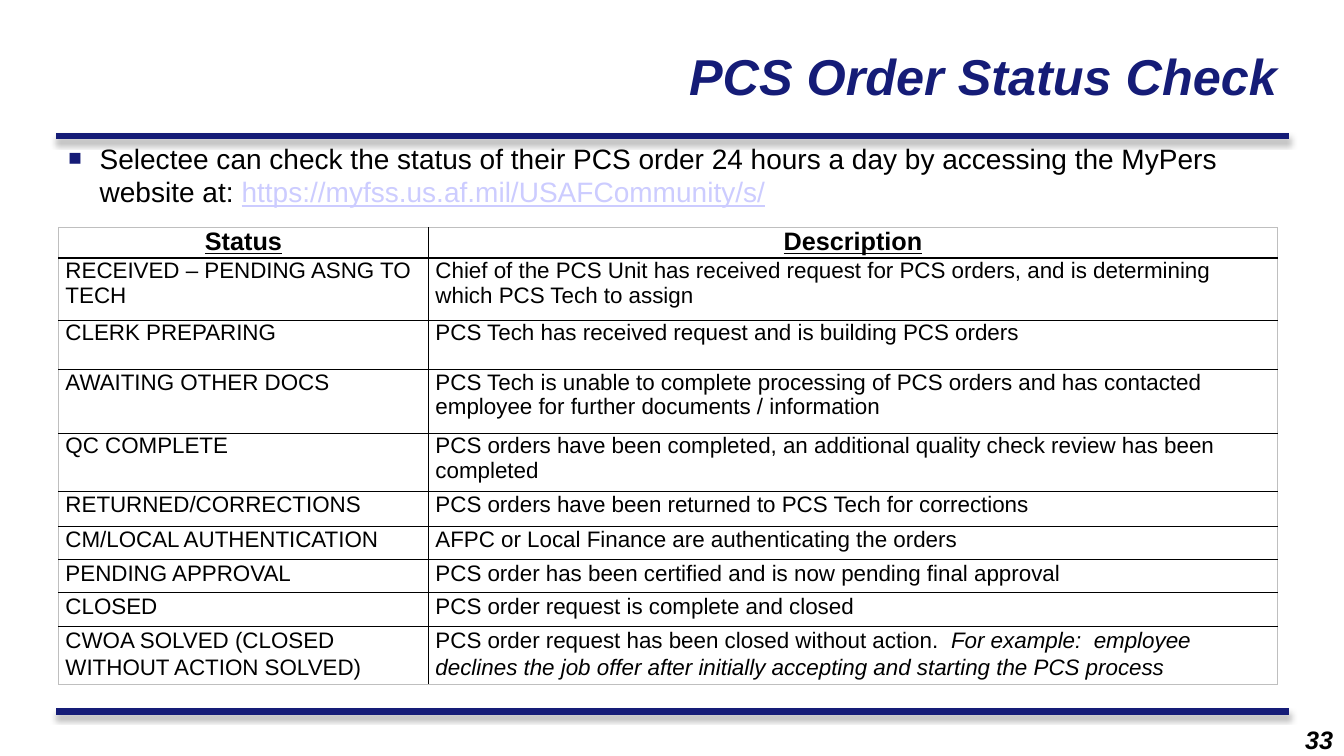
from lxml import etree
from pptx import Presentation
from pptx.dml.color import RGBColor
from pptx.enum.shapes import MSO_CONNECTOR
from pptx.enum.text import MSO_ANCHOR, PP_ALIGN
from pptx.oxml.ns import qn
from pptx.util import Inches, Pt

STRAIGHT = MSO_CONNECTOR.STRAIGHT
TOP = MSO_ANCHOR.TOP
CENTER, RIGHT, LEFT = PP_ALIGN.CENTER, PP_ALIGN.RIGHT, PP_ALIGN.LEFT
NAVY, BLACK, LILAC, GRAY = "151C77", "000000", "CCCCFF", "BFBFBF"

COLUMN_WIDTHS = [3.67, 8.42]
ROW_HEIGHTS = [0.28, 0.62, 0.49, 0.63, 0.58, 0.34, 0.33, 0.33, 0.34, 0.53]
FIRST_LOOSE_ROW = 6  # rows from here on have wider line spacing
HEADER = {"size": Pt(18), "bold": True, "underline": True}
PLAIN = {"size": Pt(16)}
STATUSES = [
    ("RECEIVED – PENDING ASNG TO TECH",
     ["Chief of the PCS Unit has received request for PCS orders, and is "
      "determining which PCS Tech to assign"]),
    ("CLERK PREPARING",
     ["PCS Tech has received request and is building PCS orders"]),
    ("AWAITING OTHER DOCS",
     ["PCS Tech is unable to complete processing of PCS orders and has "
      "contacted employee for further documents / information"]),
    ("QC COMPLETE",
     ["PCS orders have been completed, an additional quality check review "
      "has been completed"]),
    ("RETURNED/CORRECTIONS",
     ["PCS orders have been returned to PCS Tech for corrections"]),
    ("CM/LOCAL AUTHENTICATION",
     ["AFPC or Local Finance are authenticating the orders"]),
    ("PENDING APPROVAL",
     ["PCS order has been certified and is now pending final approval"]),
    ("CLOSED", ["PCS order request is complete and closed"]),
    ("CWOA SOLVED (CLOSED WITHOUT ACTION SOLVED)",
     ["PCS order request has been closed without action.  ",
      "For example:  employee declines the job offer after initially "
      "accepting and starting the PCS process"]),
]


def rgb(color):
    return RGBColor.from_string(color)


def add_element(parent, tag, **attributes):
    return etree.SubElement(parent, qn(tag), attributes)


def add_span(para, text, color=BLACK, **font):
    span = para.add_run()
    span.text = text
    span.font.name = "Arial"
    span.font.color.rgb = rgb(color)
    for name, value in font.items():
        setattr(span.font, name, value)


def place(shape, left, top, width, height):
    """Positions a shape and wraps its text from the top edge."""
    bounds = {"left": left, "top": top, "width": width, "height": height}
    for name, value in bounds.items():
        setattr(shape, name, Inches(value))
    shape.text_frame.word_wrap = True
    shape.text_frame.vertical_anchor = TOP


def add_text_box(slide, *bounds):
    box = slide.shapes.add_textbox(*map(Inches, bounds))
    place(box, *bounds)
    return box.text_frame.paragraphs[0]


def add_rule(slide, y):
    """Draws a navy line across the slide with a soft shadow below."""
    rule = slide.shapes.add_connector(
        STRAIGHT, Inches(0.56), Inches(y), Inches(12.78), Inches(y))
    rule.line.color.rgb = rgb(NAVY)
    rule.line.width = Pt(4.5)
    properties = rule.line._get_or_add_ln().getparent()
    effects = add_element(properties, "a:effectLst")
    shadow = add_element(effects, "a:outerShdw", blurRad=str(Pt(4)),
                         dist=str(Pt(3)), dir="5400000", rotWithShape="0")
    color = add_element(shadow, "a:srgbClr", val=BLACK)
    add_element(color, "a:alpha", val="40000")


def set_title(slide):
    title = slide.shapes.title
    place(title, 5.42, 0.45, 7.5, 0.98)
    title.text_frame.margin_top = 0
    title.text_frame.margin_right = Inches(0.25)
    para = title.text_frame.paragraphs[0]
    para.alignment = RIGHT
    add_span(para, "PCS Order Status Check", NAVY,
             size=Pt(36), bold=True, italic=True)


def add_bullet(slide):
    para = add_text_box(slide, 0.58, 1.35, 12.08, 0.8)
    properties = para._p.get_or_add_pPr()
    indent = Inches(0.31)
    properties.set("marL", str(indent))
    properties.set("indent", str(-indent))
    bullet_color = add_element(properties, "a:buClr")
    add_element(bullet_color, "a:srgbClr", val=NAVY)
    add_element(properties, "a:buSzPct", val="80000")
    add_element(properties, "a:buFont", typeface="Arial")
    add_element(properties, "a:buChar", char="■")
    add_span(para, "Selectee can check the status of their PCS order 24 hours "
             "a day by accessing the MyPers website at: ", size=Pt(20))
    add_span(para, "https://myfss.us.af.mil/USAFCommunity/s/", LILAC,
             size=Pt(20), underline=True)


def set_borders(cell, outer_sides):
    properties = cell._tc.get_or_add_tcPr()
    for side in "LRTB":
        outer = side in outer_sides
        line = add_element(properties, f"a:ln{side}",
                           w=str(Pt(0.5 if outer else 1)))
        fill = add_element(line, "a:solidFill")
        add_element(fill, "a:srgbClr", val=GRAY if outer else BLACK)


def format_cell(cell, outer_sides):
    margins = {"margin_left": 0.07, "margin_right": 0.07,
               "margin_top": 0, "margin_bottom": 0}
    for name, value in margins.items():
        setattr(cell, name, Inches(value))
    set_borders(cell, outer_sides)
    cell.fill.background()


def add_status_table(slide):
    frame = slide.shapes.add_table(
        len(ROW_HEIGHTS), len(COLUMN_WIDTHS), Inches(0.58), Inches(2.26),
        Inches(sum(COLUMN_WIDTHS)), Inches(sum(ROW_HEIGHTS)))
    table = frame.table
    table.horz_banding = False
    for column, width in zip(table.columns, COLUMN_WIDTHS):
        column.width = Inches(width)
    for row, height in zip(table.rows, ROW_HEIGHTS):
        row.height = Inches(height)

    rows = [("Status", ["Description"])] + STATUSES
    for r, (status, description) in enumerate(rows):
        for c, texts in enumerate([[status], description]):
            cell = table.cell(r, c)
            vertical = "T" if r == 0 else "B" if r == len(rows) - 1 else ""
            format_cell(cell, "LR"[c] + vertical)
            para = cell.text_frame.paragraphs[0]
            para.alignment = CENTER if r == 0 else LEFT
            if r >= FIRST_LOOSE_ROW:
                para.line_spacing = 1.07
            font = HEADER if r == 0 else {**PLAIN, "bold": False}
            for i, text in enumerate(texts):
                add_span(para, text, italic=i > 0, **font)


def add_page_number(slide):
    para = add_text_box(slide, 11.65, 7.14, 1.67, 0.33)
    para.alignment = RIGHT
    add_span(para, "33", size=Pt(18), bold=True, italic=True)


def main():
    deck = Presentation()
    deck.slide_width, deck.slide_height = Inches(13.33), Inches(7.5)
    slide = deck.slides.add_slide(deck.slide_layouts[5])
    for y in (7.06, 1.35):
        add_rule(slide, y)
    set_title(slide)
    add_bullet(slide)
    add_status_table(slide)
    add_page_number(slide)
    deck.save("out.pptx")


if __name__ == "__main__":
    main()
